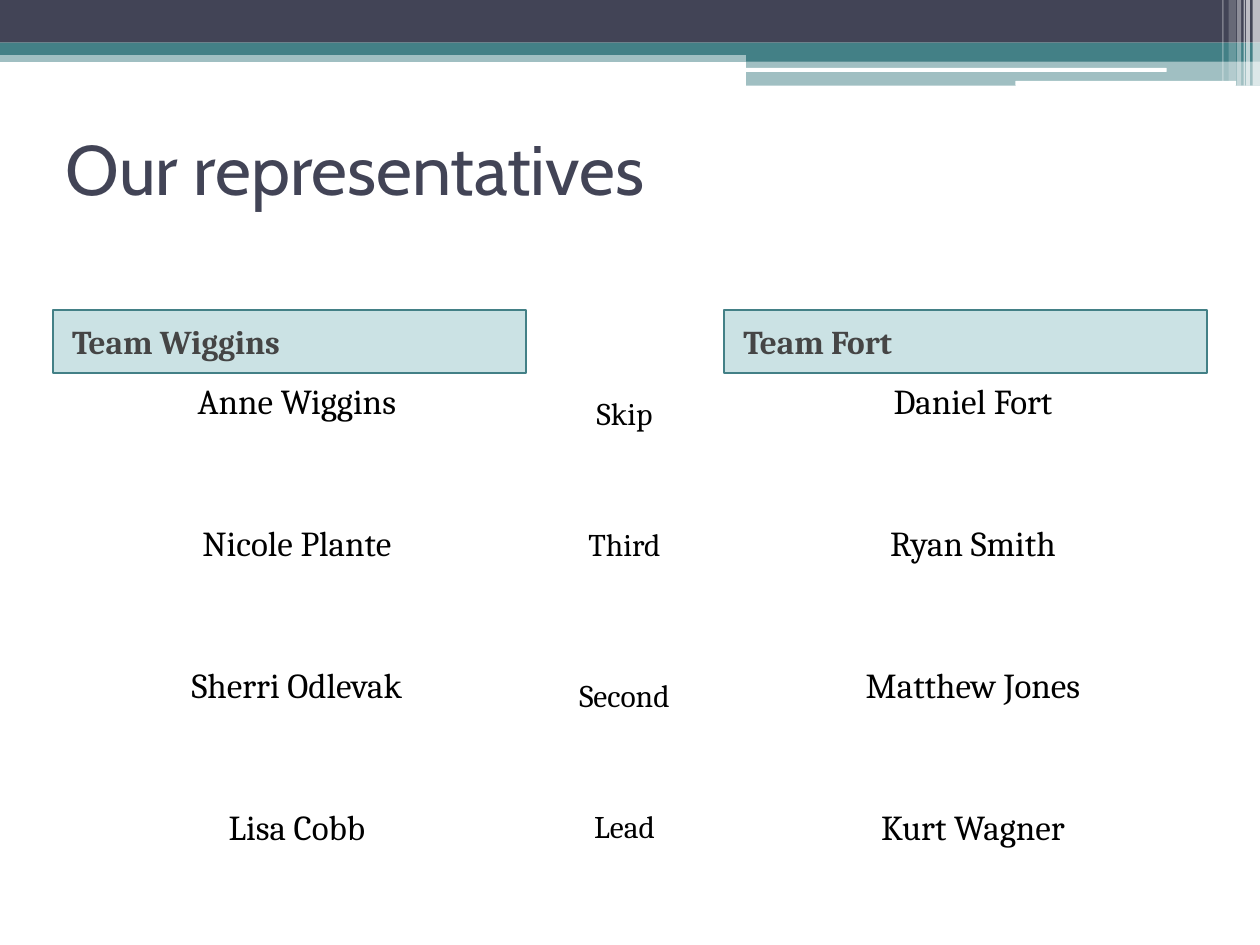
from lxml import etree
from pptx import Presentation
from pptx import util as u
from pptx.dml.color import RGBColor
from pptx.enum import shapes, text
from pptx.oxml.ns import qn

COLOURS = {
    "navy": "424456", "teal": "438086", "aqua": "328E97",
    "grey": "454545", "white": "FFFFFF", "black": "000000",
}
SERIF, SANS = "Cambria", "Cabin"
PAGE_WIDTH, PAGE_HEIGHT = 25.4, 19.05
SIDE = 15.04  # left edge of the header's right-hand part

# left, top, width, height in cm, colour, opacity in percent
BARS = [
    (0, 1.02, PAGE_WIDTH, 0.23, "teal", 50),
    (0, 0, PAGE_WIDTH, 0.86, "navy", 100),
    (0, 0.86, PAGE_WIDTH, 0.25, "teal", 100),
    (SIDE, 0.99, PAGE_WIDTH - SIDE, 0.25, "teal", 100),
    (SIDE, 1.22, PAGE_WIDTH - SIDE, 0.51, "teal", 50),
]
ROUNDED_LINES = [(15.01, 1.37, 8.51, 0.08), (20.47, 1.63, 4.45, 0.1)]
# left, width, height in cm, opacity in percent
STRIPES = [
    (25.25, 0.15, 1.73, 65), (25.12, 0.08, 1.73, 65), (25.07, 0.03, 1.73, 60),
    (24.94, 0.08, 1.73, 40), (24.77, 0.15, 1.63, 20), (24.64, 0.03, 1.63, 30),
]

# left, width in cm, heading, names
TEAMS = [
    (1.07, 9.53, "Team Wiggins",
     ["Anne Wiggins", "Nicole Plante", "Sherri Odlevak", "Lisa Cobb"]),
    (14.6, 9.73, "Team Fort",
     ["Daniel Fort", "Ryan Smith", "Matthew Jones", "Kurt Wagner"]),
]
ROLES = ["Skip", "Third", "Second", "Lead"]
NAME_GAPS = [0, 57.1, 57.1, 57.1]
ROLE_GAPS = [0, 53, 65, 53]


def set_fill(shape, colour, opacity=100):
    shape.fill.solid()
    shape.fill.fore_color.rgb = RGBColor.from_string(COLOURS[colour])
    if opacity < 100:
        value = shape.fill._xPr.find(qn("a:solidFill"))[0]
        etree.SubElement(value, qn("a:alpha"), val=str(opacity * 1000))


def place(shape, left, top, width, height):
    shape.left, shape.top = u.Cm(left), u.Cm(top)
    shape.width, shape.height = u.Cm(width), u.Cm(height)


def add_bar(page, left, top, width, height, colour, opacity=100,
            kind=shapes.MSO_SHAPE.RECTANGLE):
    bar = page.shapes.add_shape(
        kind, u.Cm(left), u.Cm(top), u.Cm(width), u.Cm(height))
    bar.shadow.inherit = False
    set_fill(bar, colour, opacity)
    bar.line.fill.background()


def write_lines(box, lines, size, colour, font=SERIF, bold=False, gaps=(0,),
                align=text.PP_ALIGN.LEFT, anchor=text.MSO_ANCHOR.TOP, indent=0):
    frame = box.text_frame
    frame.word_wrap = True
    frame.auto_size = text.MSO_AUTO_SIZE.NONE
    frame.vertical_anchor = anchor
    for index, (line, gap) in enumerate(zip(lines, gaps)):
        para = frame.paragraphs[0] if index == 0 else frame.add_paragraph()
        para.alignment = align
        para.space_before = u.Pt(gap)
        # No bullet, and the left margin in place of the template's
        properties = para._p.get_or_add_pPr()
        properties.set("marL", str(u.Cm(indent)))
        properties.set("indent", "0")
        etree.SubElement(properties, qn("a:buNone"))
        span = para.add_run()
        span.text = line
        span.font.name = font
        span.font.size = u.Pt(size)
        span.font.bold = bold
        span.font.color.rgb = RGBColor.from_string(COLOURS[colour])


def add_header(page):
    for bar in BARS:
        add_bar(page, *bar)
    for line in ROUNDED_LINES:
        add_bar(page, *line, "white", kind=shapes.MSO_SHAPE.ROUNDED_RECTANGLE)
    for left, width, height, opacity in STRIPES:
        add_bar(page, left, 0, width, height, "white", opacity)


def fill_title(title):
    place(title, 1.07, 1.9, 23.29, 2.97)
    write_lines(title, ["Our representatives"], 40, "navy", SANS,
                anchor=text.MSO_ANCHOR.MIDDLE)


def fill_team(heading_box, names_box, left, width, heading, names):
    place(heading_box, left, 6.25, width, 1.27)
    set_fill(heading_box, "aqua", 25)
    heading_box.line.color.rgb = RGBColor.from_string(COLOURS["teal"])
    heading_box.line.width = u.Pt(1)
    write_lines(heading_box, [heading], 19, "grey", bold=True,
                anchor=text.MSO_ANCHOR.MIDDLE, indent=0.13)
    place(names_box, left, 7.52, width, 10.8)
    write_lines(names_box, names, 20, "black", gaps=NAME_GAPS,
                align=text.PP_ALIGN.CENTER, indent=0.3)


def add_roles(page):
    box = page.shapes.add_textbox(u.Cm(11), u.Cm(7.82), u.Cm(3.18), u.Cm(9.4))
    write_lines(box, ROLES, 18, "black", gaps=ROLE_GAPS,
                align=text.PP_ALIGN.CENTER)


def main():
    deck = Presentation()
    deck.slide_width, deck.slide_height = u.Cm(PAGE_WIDTH), u.Cm(PAGE_HEIGHT)
    page = deck.slides.add_slide(deck.slide_layouts.get_by_name("Comparison"))
    title, *bodies = page.placeholders

    add_header(page)
    fill_title(title)
    # Bodies come in pairs: a heading and its list
    for heading_box, names_box, team in zip(bodies[::2], bodies[1::2], TEAMS):
        fill_team(heading_box, names_box, *team)
    add_roles(page)
    deck.save("out.pptx")


if __name__ == "__main__":
    main()
